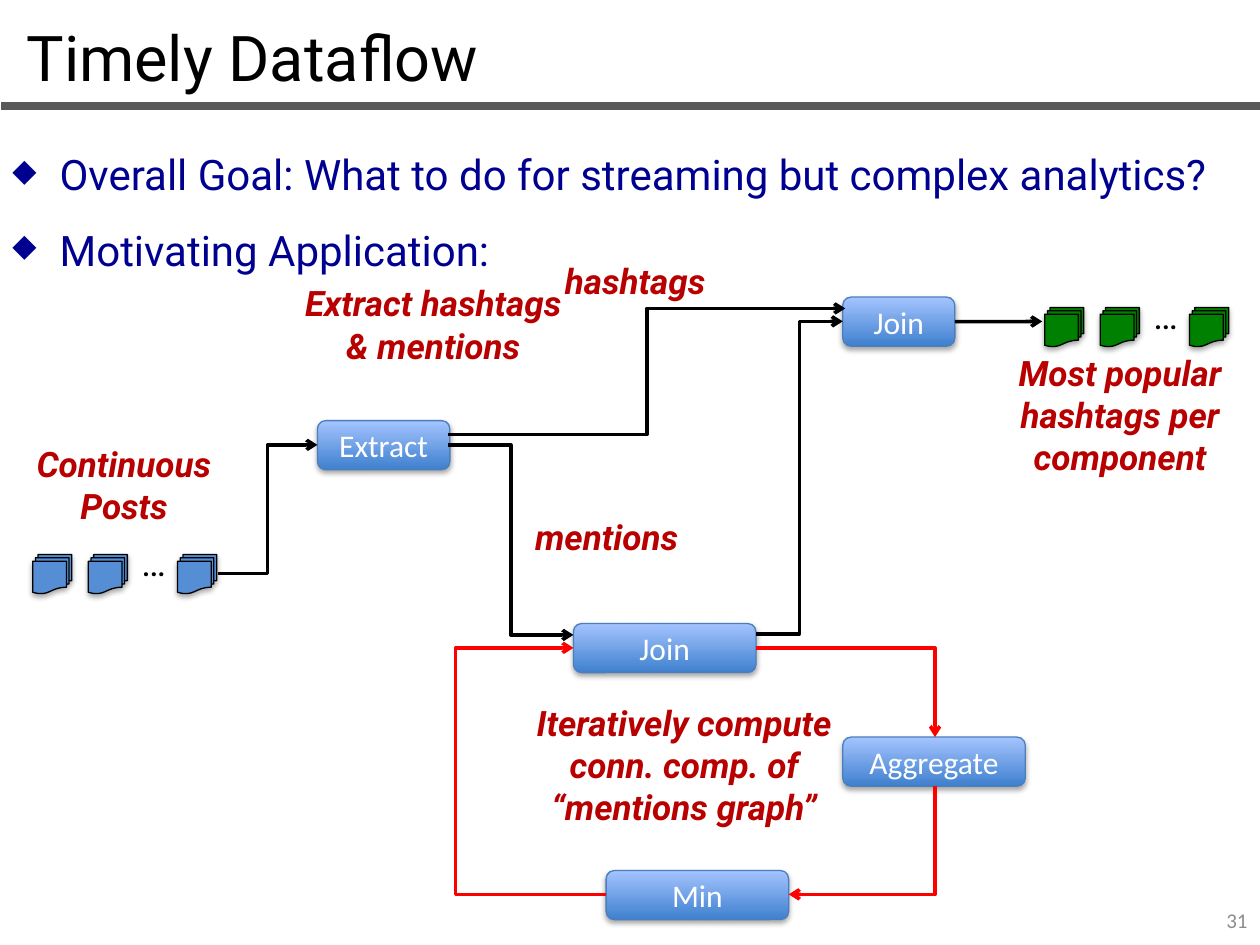
from dataclasses import dataclass

from lxml import etree
from pptx import Presentation
from pptx import util as u
from pptx.dml.color import RGBColor
from pptx.enum import shapes, text
from pptx.oxml.ns import qn


@dataclass(frozen=True)
class Theme:
    head: str = "Roboto"
    body: str = "Calibri"
    black: str = "000000"
    white: str = "FFFFFF"
    rule: str = "595959"
    navy: str = "000090"
    note: str = "B90000"
    loop: str = "FF0000"
    gray: str = "8C8C8C"
    edge: str = "4B7EBC"
    dark: str = "3F80CE"
    light: str = "A4C4FF"
    post: str = "558ED5"
    result: str = "008000"
    title: int = 36
    point: int = 24
    dots: int = 21
    label: int = 20
    node: int = 18
    page: int = 12


@dataclass(frozen=True)
class Node:
    name: str
    x: float
    y: float
    w: float = 3.68


@dataclass(frozen=True)
class Label:
    words: str
    x: float
    y: float
    w: float
    h: float


@dataclass(frozen=True)
class Elbow:
    start: tuple[float, float]
    end: tuple[float, float]
    color: str
    bends: int = 2
    turn: int = 0
    adj: float = 0.5


T = Theme()
NODE_H = 0.99
DOC = 0.79
CENTER = text.PP_ALIGN.CENTER

NODES = [
    Node("Extract", 6.4, 8.48, 2.67),
    Node("Join", 11.56, 12.57),
    Node("Min", 12.22, 17.55),
    Node("Aggregate", 16.99, 14.86),
    Node("Join", 16.99, 5.99, 2.26),
]
LABELS = [
    Label("Continuous Posts", 0.2, 8.79, 4.6, 1.96),
    Label("Extract hashtags & mentions", 5.74, 5.56, 5.99, 2.82),
    Label("Iteratively compute conn. comp. of “mentions graph”",
          9.73, 14.02, 8.13, 2.82),
    Label("Most popular hashtags per component", 19.28, 6.96, 6.6, 2.82),
    Label("hashtags", 10.47, 5.11, 4.67, 1.12),
    Label("mentions", 10.44, 10.26, 3.58, 1.12),
]
ELBOWS = [
    Elbow((4.39, 11.56), (6.4, 8.97), T.black),
    Elbow((9.04, 8.97), (11.56, 12.8), T.black),
    Elbow((15.24, 12.78), (16.99, 6.48), T.black),
    Elbow((9.04, 8.76), (17.04, 6.22), T.black),
    Elbow((15.24, 13.06), (18.85, 14.86), T.loop, bends=1),
    Elbow((18.85, 15.85), (15.9, 18.03), T.loop, bends=1, turn=90),
    Elbow((12.22, 18.03), (11.56, 13.06), T.loop, turn=180, adj=4.6),
]


def rgb(code: str) -> RGBColor:
    return RGBColor.from_string(code)


def cm(*sizes: float) -> list[u.Length]:
    return [u.Cm(size) for size in sizes]


def style(par, face: str, size: int, color: str, align=None, bold=False) -> None:
    par.alignment = align
    font = par.font
    font.name, font.size = face, u.Pt(size)
    font.color.rgb = rgb(color)
    font.bold = font.italic = bold


def write(pool, words: str, box: tuple, *look, **more):
    frame = pool.add_textbox(*cm(*box)).text_frame
    frame.word_wrap = True
    frame.text = words
    for par in frame.paragraphs:
        style(par, *look, **more)
    return frame


def edge(shape, color: str) -> None:
    """Give a thin outline and a soft shadow below."""
    shape.line.color.rgb = rgb(color)
    shape.line.width = u.Pt(0.75)
    shape.shadow.inherit = False
    glow = etree.SubElement(
        shape.element.spPr.find(qn("a:effectLst")), qn("a:outerShdw"),
        blurRad="40000", dist="23000", dir="5400000", rotWithShape="0")
    tint = etree.SubElement(glow, qn("a:srgbClr"), val=T.black)
    etree.SubElement(tint, qn("a:alpha"), val="35000")


def draw_node(pool, node: Node):
    shape = pool.add_shape(shapes.MSO_SHAPE.ROUNDED_RECTANGLE,
                           *cm(node.x, node.y, node.w, NODE_H))
    shape.fill.gradient()
    shape.fill.gradient_angle = 90
    for stop, color in zip(shape.fill.gradient_stops, (T.dark, T.light)):
        stop.color.rgb = rgb(color)
    edge(shape, T.edge)
    frame = shape.text_frame
    frame.text = node.name
    frame.vertical_anchor = text.MSO_ANCHOR.MIDDLE
    style(frame.paragraphs[0], T.body, T.node, T.white, CENTER)
    return shape


def draw_docs(pool, x: float, y: float, color: str) -> None:
    group = pool.add_group_shape().shapes
    for step in (0, 1.12, 2.92):
        doc = group.add_shape(shapes.MSO_SHAPE.FLOWCHART_MULTIDOCUMENT,
                              *cm(x + step, y, DOC, DOC))
        doc.fill.solid()
        doc.fill.fore_color.rgb = rgb(color)
        edge(doc, T.black)
    write(group, "…", (x + 1.94, y - 0.43, 0.99, 1.14),
          T.head, T.dots, T.black, CENTER)


def draw_line(pool, kind, start, end, color: str, width: float, arrow=True):
    line = pool.add_connector(kind, *cm(*start, *end))
    line.line.color.rgb = rgb(color)
    line.line.width = u.Pt(width)
    props = line.element.spPr
    if arrow:
        etree.SubElement(props.find(qn("a:ln")), qn("a:tailEnd"), type="arrow")
    etree.SubElement(props, qn("a:effectLst"))
    return line


def draw_elbow(pool, elbow: Elbow) -> None:
    """Draw a bent arrow; a turned one is laid out flat, then rotated."""
    start, end = elbow.start, elbow.end
    if elbow.turn:
        wide, high = (abs(a - b) for a, b in zip(start, end))
        if elbow.turn == 90:
            wide, high = high, wide
        mid_x, mid_y = ((a + b) / 2 for a, b in zip(start, end))
        start = mid_x - wide / 2, mid_y - high / 2
        end = mid_x + wide / 2, mid_y + high / 2
    line = draw_line(pool, shapes.MSO_CONNECTOR.ELBOW, start, end, elbow.color, 2)
    props = line.element.spPr
    if elbow.turn:
        props.find(qn("a:xfrm")).set("rot", str(elbow.turn * 60000))
    geom = props.find(qn("a:prstGeom"))
    geom.set("prst", f"bentConnector{elbow.bends + 1}")
    if elbow.adj != 0.5:
        etree.SubElement(geom.find(qn("a:avLst")), qn("a:gd"), name="adj1",
                         fmla=f"val {round(elbow.adj * 100000)}")


def draw_points(pool) -> None:
    words = ("Overall Goal: What to do for streaming but complex analytics?\n"
             "Motivating Application:")
    frame = write(pool, words, (0, 2.36, 25.37, 3.25), T.head, T.point, T.navy)
    for par in frame.paragraphs:
        par.line_spacing = 1.5
        props = par._p.get_or_add_pPr()
        props.set("marL", "342900")
        props.set("indent", "-342900")
        etree.SubElement(props, qn("a:buSzPct"), val="75000")
        etree.SubElement(props, qn("a:buChar"), char="◆")
        props.append(props.find(qn("a:defRPr")))


def main() -> None:
    deck = Presentation()
    deck.slide_width, deck.slide_height = cm(25.4, 19.05)
    slide = deck.slides.add_slide(deck.slide_layouts[5])
    pool = slide.shapes
    straight = shapes.MSO_CONNECTOR.STRAIGHT

    title = pool.title
    title.left, title.top, title.width, title.height = cm(0.28, 0.25, 24.49, 1.8)
    title.text_frame.text = "Timely Dataflow"
    title.text_frame.vertical_anchor = text.MSO_ANCHOR.TOP
    style(title.text_frame.paragraphs[0], T.head, T.title, T.black,
          text.PP_ALIGN.LEFT)
    draw_line(pool, straight, (0.03, 2.13), (25.43, 2.13), T.rule, 4.5, arrow=False)
    page = write(pool, "31", (19.48, 18.03, 5.92, 1.02),
                 T.body, T.page, T.gray, text.PP_ALIGN.RIGHT)
    page.vertical_anchor = text.MSO_ANCHOR.MIDDLE
    draw_points(pool)

    draw_docs(pool, 0.66, 11.18, T.post)
    draw_docs(pool, 21.06, 6.2, T.result)
    *_, join = [draw_node(pool, node) for node in NODES]
    for elbow in ELBOWS:
        draw_elbow(pool, elbow)
    out = draw_line(pool, straight, (19.25, 6.48), (21.01, 6.48), T.black, 2)
    out.begin_connect(join, 3)
    for label in LABELS:
        write(pool, label.words, (label.x, label.y, label.w, label.h),
              T.head, T.label, T.note, CENTER, bold=True)
    deck.save("out.pptx")


if __name__ == "__main__":
    main()
